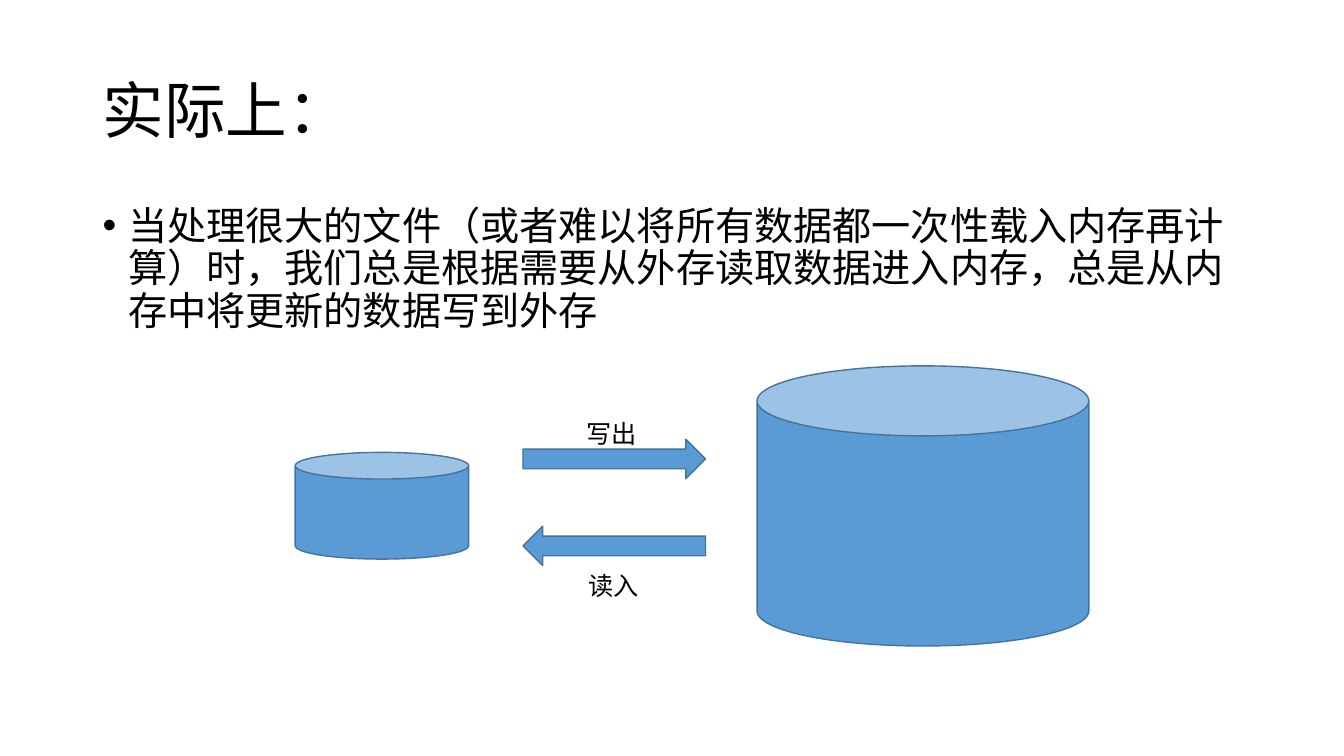
"""Build a slide on data moving between memory and external storage."""
from dataclasses import dataclass, field
from typing import Any

from lxml.etree import SubElement
from pptx import Presentation
from pptx.dml.color import RGBColor
from pptx.enum.shapes import MSO_SHAPE as Preset
from pptx.enum.text import MSO_ANCHOR as Anchor, MSO_AUTO_SIZE as AutoSize
from pptx.oxml.ns import qn
from pptx.slide import Slide
from pptx.util import Cm, Pt

BLACK = RGBColor(0x00, 0x00, 0x00)
BLUE = RGBColor(0x5B, 0x9B, 0xD5)
DARK_BLUE = RGBColor(0x43, 0x73, 0x9E)
FONT = "Calibri"
HANGING = Cm(0.64)
LABEL_FRAME = {"word_wrap": False, "auto_size": AutoSize.SHAPE_TO_FIT_TEXT}


@dataclass(frozen=True)
class Area:
    left: float
    top: float
    width: float
    height: float

    def lengths(self) -> tuple[Cm, Cm, Cm, Cm]:
        return Cm(self.left), Cm(self.top), Cm(self.width), Cm(self.height)


@dataclass(frozen=True)
class Figure:
    preset: Preset
    area: Area
    rotation: int = 0


@dataclass(frozen=True)
class Caption:
    text: str
    area: Area
    size: int
    frame: dict[str, Any]
    para: dict[str, Any] = field(default_factory=dict)
    bullet: str = ""


FIGURES = [
    Figure(Preset.CAN, Area(7.44, 11.4, 4.37, 2.69)),
    Figure(Preset.CAN, Area(19.08, 9.22, 8.36, 7.06)),
    Figure(Preset.RIGHT_ARROW, Area(13.18, 11.07, 4.6, 0.99)),
    Figure(Preset.RIGHT_ARROW, Area(13.18, 13.26, 4.6, 0.99), 180),
]

CAPTIONS = [
    Caption("实际上：", Area(2.34, 1.02, 29.21, 3.68), 44,
            {"word_wrap": True, "vertical_anchor": Anchor.MIDDLE},
            {"line_spacing": 0.9}),
    Caption("当处理很大的文件（或者难以将所有数据都一次性载入内存再计算）时，"
            "我们总是根据需要从外存读取数据进入内存，总是从内存中将更新的数据写到外存",
            Area(2.34, 5.08, 29.21, 12.09), 28, {"word_wrap": True},
            {"line_spacing": 0.9, "space_before": Pt(10)}, "•"),
    Caption("写出", Area(14.53, 10.41, 1.8, 1.02), 18, LABEL_FRAME),
    Caption("读入", Area(14.58, 14.25, 1.8, 1.02), 18, LABEL_FRAME),
]


def apply_format(target: Any, values: dict[str, Any]) -> None:
    """Set each named attribute on the target."""
    for name, value in values.items():
        setattr(target, name, value)


def draw_figure(page: Slide, figure: Figure) -> None:
    """Draw one outlined blue shape."""
    shape = page.shapes.add_shape(figure.preset, *figure.area.lengths())
    shape.rotation = figure.rotation
    shape.shadow.inherit = False
    shape.fill.solid()
    shape.fill.fore_color.rgb = BLUE
    shape.line.color.rgb = DARK_BLUE
    shape.line.width = Pt(1)


def draw_caption(page: Slide, caption: Caption) -> None:
    """Write one text box, with a bullet if it has one."""
    box = page.shapes.add_textbox(*caption.area.lengths())
    apply_format(box.text_frame, caption.frame)
    para = box.text_frame.paragraphs[0]
    apply_format(para, caption.para)
    span = para.add_run()
    span.text = caption.text
    apply_format(span.font, {"name": FONT, "size": Pt(caption.size)})
    span.font.color.rgb = BLACK
    if caption.bullet:
        properties = para._p.get_or_add_pPr()
        properties.set("marL", str(HANGING))
        properties.set("indent", str(-HANGING))
        SubElement(properties, qn("a:buFont"), typeface="Arial")
        SubElement(properties, qn("a:buChar"), char=caption.bullet)


def main() -> None:
    """Assemble and save the deck."""
    deck = Presentation()
    apply_format(deck, {"slide_width": Cm(33.87), "slide_height": Cm(19.05)})
    page = deck.slides.add_slide(deck.slide_layouts[6])
    for figure in FIGURES:
        draw_figure(page, figure)
    for caption in CAPTIONS:
        draw_caption(page, caption)
    deck.save("out.pptx")


if __name__ == "__main__":
    main()
